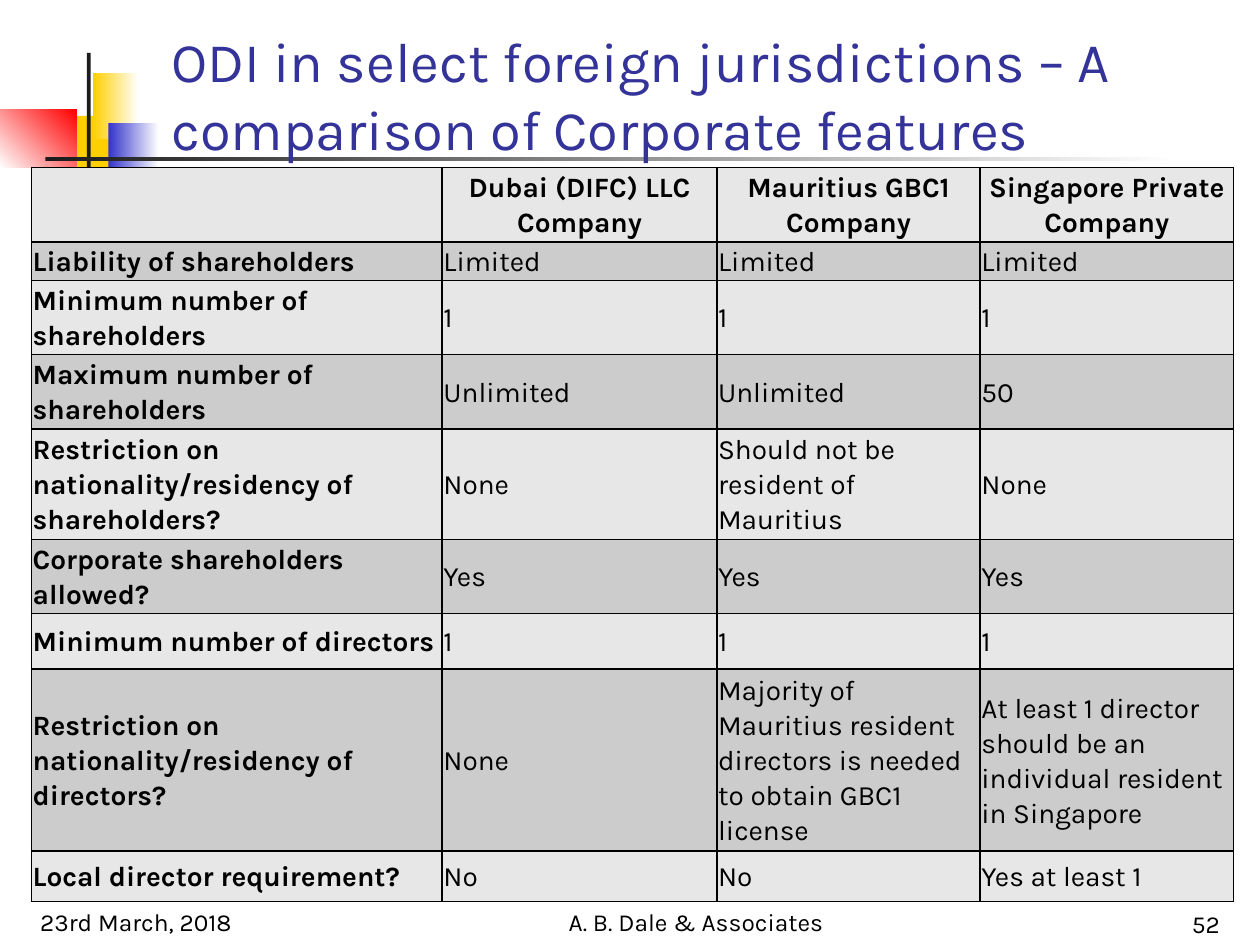
from lxml.etree import SubElement
from pptx import Presentation
from pptx.dml.color import RGBColor
from pptx.enum.shapes import MSO_SHAPE
from pptx.enum.text import MSO_ANCHOR, PP_ALIGN
from pptx.oxml.ns import qn
from pptx.util import Inches, Pt

COLORS = {
    "yellow": "FFCF01", "blue": "3333CC", "red": "FF0000", "dark": "1C1C1C",
    "white": "FFFFFF", "black": "000000", "title": "333399",
    "light_row": "E7E7E7", "dark_row": "CCCCCC",
}
FONT = "Karla"


def color(name):
    return RGBColor.from_string(COLORS[name])


def write(frame, text, size, color_name="black", align=PP_ALIGN.LEFT, bold=False):
    """Put one formatted paragraph in a text frame and return it."""
    frame.text = text
    frame.word_wrap = True
    para = frame.paragraphs[0]
    para.alignment = align
    font = para.runs[0].font
    font.name, font.size, font.bold = FONT, Pt(size), bold
    font.color.rgb = color(color_name)
    return para


deck = Presentation()
deck.slide_width, deck.slide_height = Inches(10), Inches(7.5)
page = deck.slides.add_slide(deck.slide_layouts[6])

# Corner decoration: left, top, width, height, colours, gradient angle
decoration = [
    (0.46, 0.92, 0.48, 0.52, ["yellow"], 0),
    (0.59, 1.33, 0.46, 0.52, ["blue"], 0),
    (0.74, 0.58, 0.36, 0.52, ["yellow", "white"], 0),
    (0.86, 0.98, 0.4, 0.52, ["blue", "white"], 0),
    (0, 0.87, 0.61, 0.46, ["white", "red"], 45),
    (0.69, 0.42, 0.03, 1.15, ["dark"], 0),
    (0.36, 1.25, 9, 0.03, ["dark", "white"], 0),
]
for *place, names, angle in decoration:
    box = page.shapes.add_shape(MSO_SHAPE.RECTANGLE, *map(Inches, place))
    box.shadow.inherit = False
    box.line.fill.background()
    if len(names) == 1:
        box.fill.solid()
        box.fill.fore_color.rgb = color(names[0])
    else:
        box.fill.gradient()
        box.fill.gradient_angle = angle
        for position, (stop, name) in enumerate(zip(box.fill.gradient_stops, names)):
            stop.position = position
            stop.color.rgb = color(name)

# Title and footer
texts = [
    (1.26, 0.23, 8.52, 1.1, "ODI in select foreign jurisdictions – A comparison of Corporate features",
     32, "title", PP_ALIGN.LEFT),
    (0.22, 6.98, 2.08, 0.5, "23rd March, 2018", 14, "black", PP_ALIGN.LEFT),
    (3.94, 6.98, 3.17, 0.5, "A. B. Dale & Associates", 14, "black", PP_ALIGN.CENTER),
    (7.7, 7, 2.08, 0.5, "52", 14, "black", PP_ALIGN.RIGHT),
]
for *place, text, size, color_name, align in texts:
    box = page.shapes.add_textbox(*map(Inches, place))
    box.text_frame.vertical_anchor = MSO_ANCHOR.BOTTOM
    write(box.text_frame, text, size, color_name, align)

# Comparison table
rows = [
    ("", "Dubai (DIFC) LLC Company", "Mauritius GBC1 Company", "Singapore Private Company"),
    ("Liability of shareholders", "Limited", "Limited", "Limited"),
    ("Minimum number of shareholders", "1", "1", "1"),
    ("Maximum number of shareholders", "Unlimited", "Unlimited", "50"),
    ("Restriction on nationality/residency of shareholders?", "None",
     "Should not be resident of Mauritius", "None"),
    ("Corporate shareholders allowed?", "Yes", "Yes", "Yes"),
    ("Minimum number of directors", "1", "1", "1"),
    ("Restriction on nationality/residency of directors?", "None",
     "Majority of Mauritius resident directors is needed to obtain GBC1 license",
     "At least 1 director should be an individual resident in Singapore"),
    ("Local director requirement?", "No", "No", "Yes at least 1"),
]
column_widths = [3.26, 2.18, 2.09, 2.01]
row_heights = [0.57, 0.3, 0.57, 0.57, 0.86, 0.57, 0.44, 1.41, 0.4]
table = page.shapes.add_table(
    len(rows), len(column_widths), Inches(0.25), Inches(1.33),
    Inches(sum(column_widths)), Inches(sum(row_heights))).table
for column, width in zip(table.columns, column_widths):
    column.width = Inches(width)
for row, height in zip(table.rows, row_heights):
    row.height = Inches(height)

for r, values in enumerate(rows):
    for c, value in enumerate(values):
        cell = table.cell(r, c)
        cell.vertical_anchor = MSO_ANCHOR.MIDDLE
        cell.margin_left = cell.margin_right = Inches(0.01)
        cell.margin_top = cell.margin_bottom = Inches(0.01)
        if value:
            align = PP_ALIGN.CENTER if r == 0 else PP_ALIGN.LEFT
            para = write(cell.text_frame, value, 16, align=align, bold=r == 0 or c == 0)
            para.line_spacing = 1.07
        properties = cell._tc.get_or_add_tcPr()
        for side in ("a:lnL", "a:lnR", "a:lnT", "a:lnB"):
            border = SubElement(properties, qn(side), w=str(Pt(1)))
            fill = SubElement(border, qn("a:solidFill"))
            SubElement(fill, qn("a:srgbClr"), val=COLORS["black"])
        cell.fill.solid()
        cell.fill.fore_color.rgb = color("dark_row" if r % 2 else "light_row")

deck.save("out.pptx")
